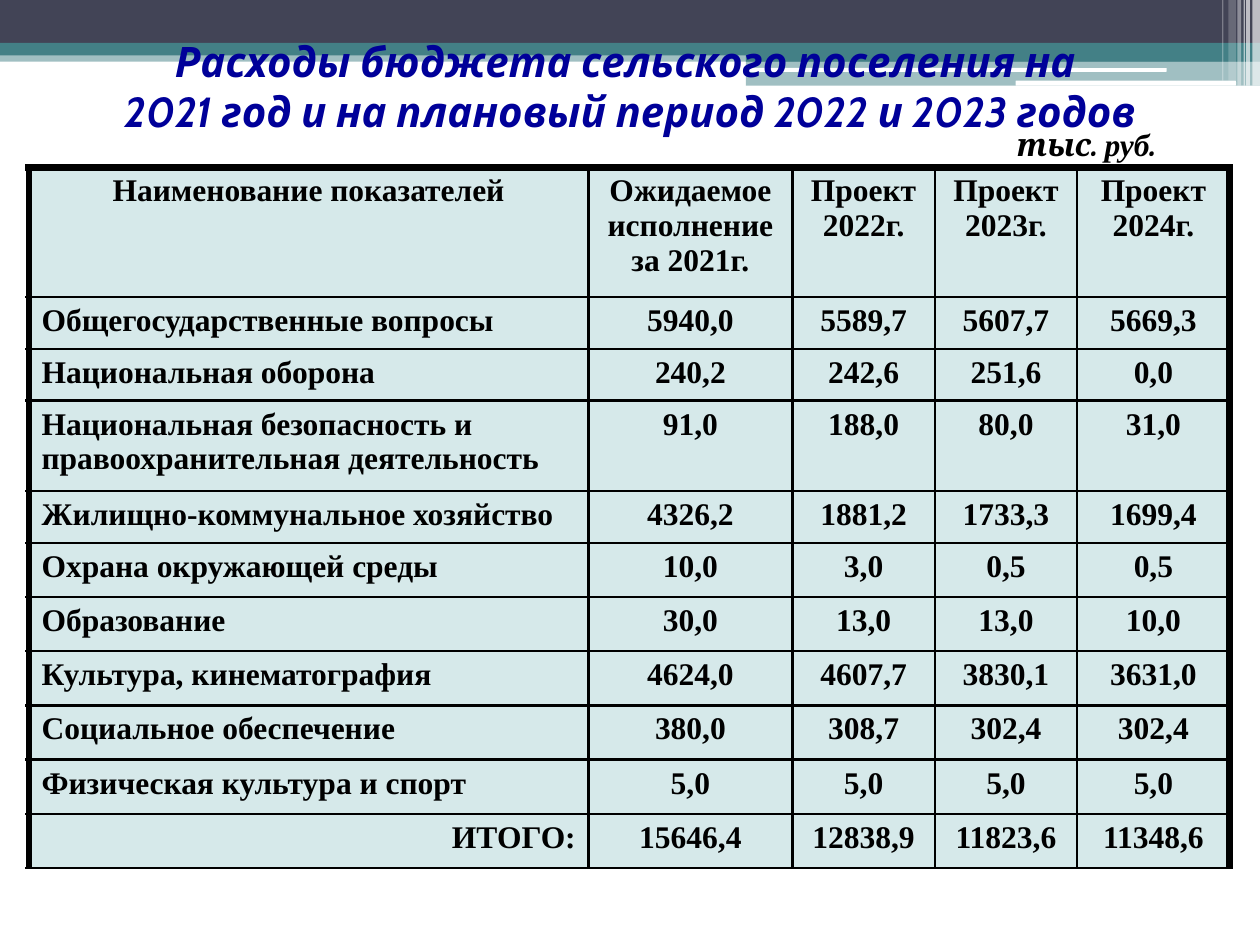
from lxml import etree
from pptx import Presentation
from pptx.dml.color import RGBColor
from pptx.enum.shapes import MSO_SHAPE as SHAPE
from pptx.enum.text import MSO_ANCHOR as ANCHOR, PP_ALIGN as ALIGN
from pptx.oxml import parse_xml
from pptx.oxml.ns import nsdecls, qn
from pptx.util import Inches, Pt


def rgb(value):
    return RGBColor.from_string(value)


def style_run(r, size, font, color, italic=False):
    r.font.size = Pt(size)
    r.font.name = font
    r.font.bold = True
    r.font.italic = italic
    r.font.color.rgb = rgb(color)


prs = Presentation()
prs.slide_width, prs.slide_height = Inches(10), Inches(7.5)
s = prs.slides.add_slide(prs.slide_layouts[5])

TEAL, NAVY, WHITE = "438086", "424456", "FFFFFF"
bars = [
    (0, 0.4, 10, 0.09, TEAL, 50),
    (0, 0, 10, 0.34, NAVY, 100),
    (0, 0.34, 10, 0.1, TEAL, 100),
    (5.92, 0.39, 4.08, 0.1, TEAL, 100),
    (5.92, 0.48, 4.08, 0.2, TEAL, 50),
    (5.91, 0.54, 3.35, 0.03, WHITE, 100),
    (8.06, 0.64, 1.75, 0.04, WHITE, 100),
    (9.94, 0, 0.06, 0.68, WHITE, 65),
    (9.89, 0, 0.03, 0.68, WHITE, 65),
    (9.87, 0, 0.01, 0.68, WHITE, 60),
    (9.82, 0, 0.03, 0.68, WHITE, 40),
    (9.75, 0, 0.06, 0.64, WHITE, 20),
    (9.7, 0, 0.01, 0.64, WHITE, 30),
]
for x, y, w, h, color, opacity in bars:
    rounded = color == WHITE and opacity == 100
    kind = SHAPE.ROUNDED_RECTANGLE if rounded else SHAPE.RECTANGLE
    sp = s.shapes.add_shape(kind, Inches(x), Inches(y), Inches(w), Inches(h))
    sp.shadow.inherit = False
    sp.line.fill.background()
    sp.fill.solid()
    sp.fill.fore_color.rgb = rgb(color)
    if opacity < 100:
        clr = sp._element.spPr.find(qn("a:solidFill"))[0]
        etree.SubElement(clr, qn("a:alpha")).set("val", str(opacity * 1000))

title = s.shapes.title
s.shapes._spTree.append(title._element)
title.left, title.top = Inches(0), Inches(0.21)
title.width, title.height = Inches(10), Inches(0.94)
tf = title.text_frame
tf.text = ("Расходы бюджета сельского поселения на \v"
           "2021 год и на плановый период 2022 и 2023 годов")
tf.vertical_anchor = ANCHOR.MIDDLE
p = tf.paragraphs[0]
p.alignment = ALIGN.CENTER
for r in p.runs:
    style_run(r, 24, "Cabin", "000099", italic=True)

rows = [
    ("Наименование показателей", "Ожидаемое исполнение за 2021г.",
     "Проект 2022г.", "Проект 2023г.", "Проект 2024г."),
    ("Общегосударственные вопросы", "5940,0", "5589,7", "5607,7", "5669,3"),
    ("Национальная оборона", "240,2", "242,6", "251,6", "0,0"),
    ("Национальная безопасность и правоохранительная деятельность",
     "91,0", "188,0", "80,0", "31,0"),
    ("Жилищно-коммунальное хозяйство", "4326,2", "1881,2", "1733,3", "1699,4"),
    ("Охрана окружающей среды", "10,0", "3,0", "0,5", "0,5"),
    ("Образование", "30,0", "13,0", "13,0", "10,0"),
    ("Культура, кинематография", "4624,0", "4607,7", "3830,1", "3631,0"),
    ("Социальное обеспечение", "380,0", "308,7", "302,4", "302,4"),
    ("Физическая культура и спорт", "5,0", "5,0", "5,0", "5,0"),
    ("ИТОГО:", "15646,4", "12838,9", "11823,6", "11348,6"),
]
col_widths = [4.44, 1.62, 1.13, 1.13, 1.21]
row_heights = [1.03, 0.41, 0.41, 0.72, 0.41] + [0.43] * 6
last_row, last_col = len(rows) - 1, len(col_widths) - 1

table = s.shapes.add_table(len(rows), len(col_widths), Inches(0.23), Inches(1.33),
                           Inches(sum(col_widths)), Inches(sum(row_heights))).table
table.first_row = table.horz_banding = False
for col, w in zip(table.columns, col_widths):
    col.width = Inches(w)
for row, h in zip(table.rows, row_heights):
    row.height = Inches(h)

for i, values in enumerate(rows):
    for j, value in enumerate(values):
        cell = table.cell(i, j)
        thick = {"L": j == 0, "R": j == last_col, "T": i == 0, "B": False}
        tc_pr = cell._tc.get_or_add_tcPr()
        for side, is_thick in thick.items():
            tc_pr.append(parse_xml(
                f'<a:ln{side} {nsdecls("a")} w="{Pt(4.5 if is_thick else 1.5)}">'
                f'<a:solidFill><a:srgbClr val="000000"/></a:solidFill></a:ln{side}>'))
        cell.fill.solid()
        cell.fill.fore_color.rgb = rgb("D6E9EA")
        cell.text_frame.text = value
        p = cell.text_frame.paragraphs[0]
        if j > 0 or i == 0:
            p.alignment = ALIGN.CENTER
        else:
            p.alignment = ALIGN.RIGHT if i == last_row else ALIGN.LEFT
        style_run(p.runs[0], 18, "Times New Roman", "000000")

unit = s.shapes.add_textbox(Inches(7.97), Inches(0.94), Inches(1.48), Inches(0.4))
tf = unit.text_frame
tf.word_wrap = True
p = tf.paragraphs[0]
for text, font in [("тыс. ", "Cambria"), ("руб", "Times New Roman"), (".", "Cambria")]:
    r = p.add_run()
    r.text = text
    style_run(r, 18, font, "000000", italic=True)

prs.save("out.pptx")
